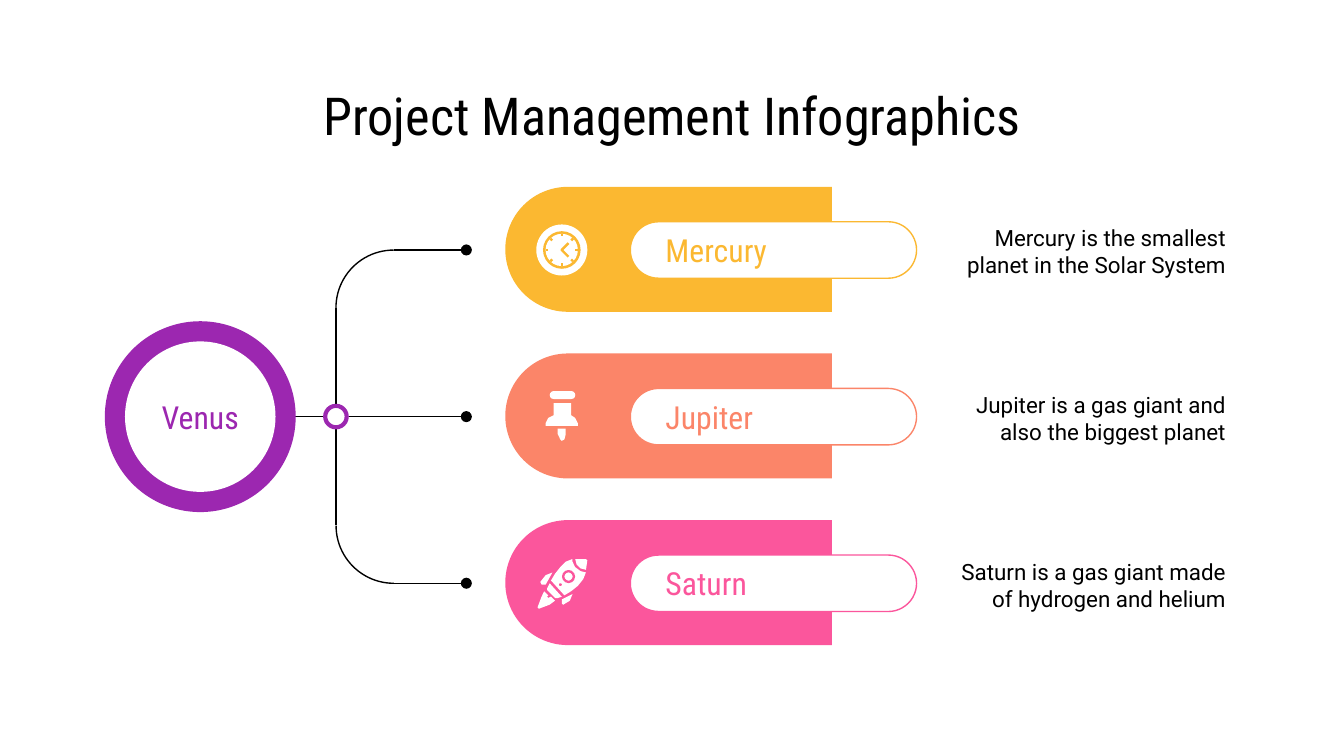
from math import cos, pi, sin

from lxml import etree
from pptx import Presentation
from pptx import util as u
from pptx.dml.color import RGBColor
from pptx.enum import shapes as kinds, text as layout
from pptx.oxml.ns import qn

COLORS = {"yellow": "FBB831", "coral": "FB8569", "pink": "FB569C",
          "purple": "9C27B0", "black": "000000", "white": "FFFFFF"}
SHAPE = kinds.MSO_SHAPE
ALIGN = layout.PP_ALIGN
ANCHOR = layout.MSO_ANCHOR


def paint(shape, fill=None, line=None, width=0.75):
    shape.shadow.inherit = False
    if fill:
        shape.fill.solid()
        shape.fill.fore_color.rgb = RGBColor.from_string(COLORS[fill])
    else:
        shape.fill.background()
    if line:
        shape.line.color.rgb = RGBColor.from_string(COLORS[line])
        shape.line.width = u.Pt(width)
    else:
        shape.line.fill.background()


def write(box, words, size=17, font="Roboto Condensed", color="black",
          align=ALIGN.CENTER, anchor=ANCHOR.MIDDLE, indent=0.1):
    frame = box.text_frame
    frame.word_wrap = True
    frame.vertical_anchor = anchor
    frame.margin_left = u.Inches(indent)
    frame.margin_right = frame.margin_top = frame.margin_bottom = u.Inches(0.1)
    para = frame.paragraphs[0]
    para.alignment = align
    span = para.add_run()
    span.text = words
    span.font.size = u.Pt(size)
    span.font.name = font
    span.font.color.rgb = RGBColor.from_string(COLORS[color])


deck = Presentation()
deck.slide_width = u.Inches(10)
deck.slide_height = u.Inches(10 * 9 / 16)
slide = deck.slides.add_slide(deck.slide_layouts[6])

title = slide.shapes.add_textbox(*map(u.Inches, (0.78, 0.59, 8.44, 0.53)))
write(title, "Project Management Infographics", size=28)

# Planet rows
MIDDLE, PITCH = 3.1, 1.24
rows = [
    ("Mercury", "Mercury is the smallest planet in the Solar System", "yellow"),
    ("Jupiter", "Jupiter is a gas giant and also the biggest planet", "coral"),
    ("Saturn", "Saturn is a gas giant made of hydrogen and helium", "pink"),
]
groups = []
for number, (name, fact, color) in enumerate(rows):
    center = MIDDLE + (number - 1) * PITCH
    group = slide.shapes.add_group_shape().shapes
    groups.append(group)

    tab = group.add_shape(SHAPE.ROUND_2_SAME_RECTANGLE,
                          *map(u.Inches, (4.51, center - 1.22, 0.93, 2.43)))
    tab.adjustments[0], tab.adjustments[1] = 0.5, 0
    tab.rotation = 270
    paint(tab, color)

    pill = group.add_shape(SHAPE.ROUNDED_RECTANGLE,
                           *map(u.Inches, (4.69, center - 0.21, 2.13, 0.42)))
    pill.adjustments[0] = 0.5
    paint(pill, "white", color)
    write(pill, name, color=color, align=ALIGN.LEFT, indent=0.2)

    note = group.add_textbox(*map(u.Inches, (6.94, center - 0.29, 2.28, 0.58)))
    write(note, fact, size=12, font="Roboto", align=ALIGN.RIGHT, anchor=ANCHOR.TOP)

clock, pin, rocket = groups

# Clock: rim, gap and face, then ticks and hands in one outline
CLOCK_X, CLOCK_Y = 4.18, MIDDLE - PITCH
for radius, fill in ((0.19, "white"), (0.14, "yellow"), (0.12, "white")):
    disc = clock.add_shape(SHAPE.OVAL, *map(u.Inches, (
        CLOCK_X - radius, CLOCK_Y - radius, 2 * radius, 2 * radius)))
    paint(disc, fill)
hands = [(CLOCK_X + x, CLOCK_Y + y) for x, y in ((0.05, -0.05), (0, 0), (0.05, 0.05))]
marks = clock.build_freeform(*map(u.Inches, hands[0]))
marks.add_line_segments([tuple(map(u.Inches, point)) for point in hands[1:]], close=False)
for step in range(8):
    angle = step * pi / 4
    outer, inner = [(u.Inches(CLOCK_X + radius * cos(angle)),
                     u.Inches(CLOCK_Y + radius * sin(angle))) for radius in (0.12, 0.1)]
    marks.move_to(*outer)
    marks.add_line_segments([inner], close=False)
paint(marks.convert_to_shape(), line="yellow", width=1.25)

# Pushpin and rocket
pin_head = pin.add_shape(SHAPE.ROUNDED_RECTANGLE, *map(u.Inches, (4.09, 2.91, 0.19, 0.06)))
pin_head.adjustments[0] = 0.5
paint(pin_head, "white")

pin_body = [(4.12, 3), (4.25, 3), (4.25, 3.09), (4.28, 3.11), (4.3, 3.15), (4.3, 3.17),
            (4.06, 3.17), (4.06, 3.15), (4.08, 3.11), (4.12, 3.09)]
pin_tip = [(4.15, 3.19), (4.21, 3.19), (4.21, 3.23), (4.2, 3.27), (4.18, 3.28),
           (4.17, 3.27), (4.15, 3.23)]
rocket_body = [(4.26, 4.16), (4.21, 4.18), (4.17, 4.22), (4.13, 4.27), (4.1, 4.32),
               (4.2, 4.43), (4.25, 4.4), (4.3, 4.36), (4.34, 4.31), (4.36, 4.26),
               (4.32, 4.25), (4.28, 4.22), (4.26, 4.18)]
rocket_nose = [(4.28, 4.16), (4.36, 4.16), (4.37, 4.17), (4.36, 4.24), (4.32, 4.23),
               (4.29, 4.2)]
rocket_base = [(4.09, 4.34), (4.18, 4.44), (4.15, 4.45), (4.13, 4.45), (4.07, 4.39),
               (4.07, 4.38)]
left_fin = [(4.11, 4.26), (4.06, 4.28), (4.02, 4.33), (4.03, 4.35), (4.06, 4.35)]
right_fin = [(4.26, 4.42), (4.24, 4.47), (4.19, 4.5), (4.18, 4.49), (4.18, 4.46)]
flame = [(4.05, 4.4), (4.03, 4.44), (4, 4.52), (4.01, 4.53), (4.09, 4.5), (4.13, 4.47),
         (4.1, 4.44), (4.08, 4.45), (4.07, 4.44), (4.08, 4.43)]
for group, outlines in ((pin, (pin_body, pin_tip)),
                        (rocket, (rocket_body, rocket_nose, rocket_base,
                                  left_fin, right_fin, flame))):
    for outline in outlines:
        points = [tuple(map(u.Inches, point)) for point in outline]
        builder = group.build_freeform(*points[0])
        builder.add_line_segments(points[1:])
        paint(builder.convert_to_shape(), "white")
window = rocket.add_shape(SHAPE.OVAL, *map(u.Inches, (4.19, 4.25, 0.08, 0.08)))
paint(window, "white", "pink", 1.25)
rivet = rocket.add_shape(SHAPE.OVAL, *map(u.Inches, (4.16, 4.34, 0.02, 0.02)))
paint(rivet, "pink")

# Branches from the hub to the rows
hub = slide.shapes.add_group_shape().shapes
HUB_X, DOT_X, BEND = 2.5, 3.47, 0.43
links = [(1.75, MIDDLE, DOT_X, MIDDLE, True)]
for side, rotation in ((-1, 270), (1, 180)):
    end = MIDDLE + side * PITCH
    bend = hub.add_shape(SHAPE.ARC, *map(u.Inches, (
        HUB_X, end - BEND - side * BEND, 2 * BEND, 2 * BEND)))
    bend.adjustments[0], bend.adjustments[1] = 162, 0
    bend.rotation = rotation
    paint(bend, line="black")
    links += [(HUB_X + BEND, end, DOT_X, end, True),
              (HUB_X, end - side * BEND, HUB_X, MIDDLE, False)]
for *ends, dotted in links:
    link = hub.add_connector(kinds.MSO_CONNECTOR.STRAIGHT, *map(u.Inches, ends))
    link.line.color.rgb = RGBColor.from_string(COLORS["black"])
    link.line.width = u.Pt(0.75)
    properties = link._element.spPr
    if dotted:
        etree.SubElement(properties.find(qn("a:ln")), qn("a:tailEnd"), type="oval")
    etree.SubElement(properties, qn("a:effectLst"))

knot = hub.add_shape(SHAPE.OVAL, *map(u.Inches, (HUB_X - 0.08, MIDDLE - 0.08, 0.16, 0.16)))
paint(knot, "white", "purple", 2.25)
ring = hub.add_shape(SHAPE.OVAL, *map(u.Inches, (0.78, MIDDLE - 0.71, 1.42, 1.42)))
paint(ring, "purple")
core = hub.add_shape(SHAPE.OVAL, *map(u.Inches, (0.93, MIDDLE - 0.56, 1.12, 1.12)))
paint(core, "white")
write(core, "Venus", color="purple")

deck.save("out.pptx")
